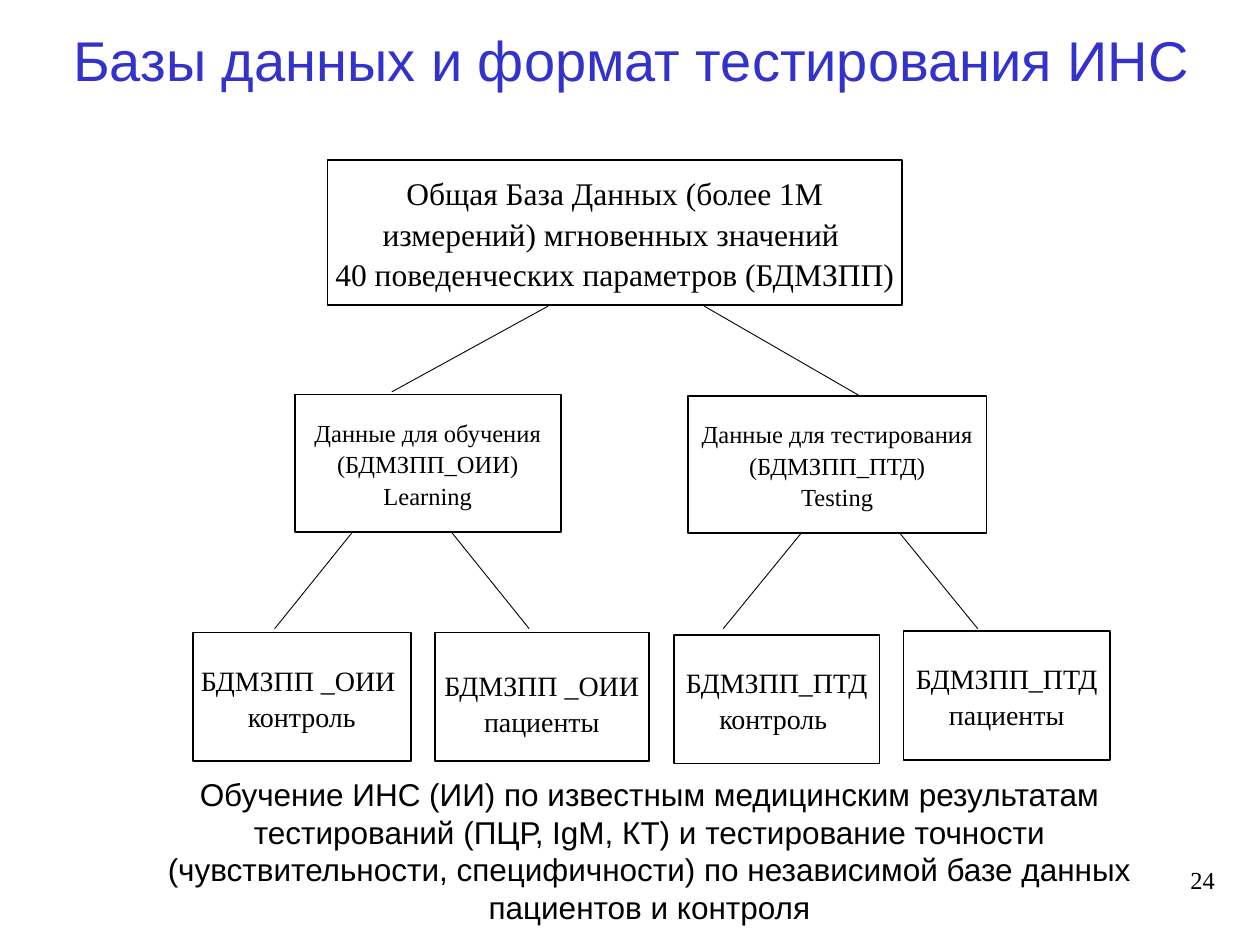
from dataclasses import dataclass

from lxml.etree import SubElement
from pptx import Presentation
from pptx.dml.color import RGBColor
from pptx.enum.shapes import MSO_CONNECTOR, MSO_SHAPE
from pptx.enum.text import MSO_ANCHOR, PP_ALIGN
from pptx.oxml.ns import qn
from pptx.util import Inches, Pt


@dataclass(frozen=True)
class Theme:
    ink: RGBColor = RGBColor(0x00, 0x00, 0x00)
    paper: RGBColor = RGBColor(0xFF, 0xFF, 0xFF)
    accent: RGBColor = RGBColor(0x33, 0x33, 0xCC)
    sans: str = "Arial"
    serif: str = "Times New Roman"
    title: int = 32
    body: int = 18
    leaf: int = 16
    small: int = 14
    border: float = 1
    branch: float = 0.5


def assign(target, values):
    for attribute, value in values.items():
        setattr(target, attribute, value)


class SlideBuilder:
    def __init__(self, slide, theme):
        self.slide = slide
        self.theme = theme

    def fill_text(self, frame, lines, size, face, color, align, spacing=None):
        frame.text = "\n".join(lines)
        for paragraph in frame.paragraphs:
            assign(paragraph, {"alignment": align, "line_spacing": spacing})
            assign(paragraph.font, {"size": Pt(size), "name": face})
            paragraph.font.color.rgb = color

    def title(self, text, bounds):
        heading = self.slide.shapes.title
        places = map(Inches, bounds)
        assign(heading, dict(zip(("left", "top", "width", "height"), places)))
        assign(heading.text_frame, {
            "word_wrap": False, "vertical_anchor": MSO_ANCHOR.TOP})
        self.fill_text(heading.text_frame, [text], self.theme.title,
                       self.theme.sans, self.theme.accent, PP_ALIGN.LEFT)

    def text(self, text, bounds, size, face, align):
        label = self.slide.shapes.add_textbox(*map(Inches, bounds))
        label.text_frame.word_wrap = True
        self.fill_text(label.text_frame, [text], size, face, self.theme.ink,
                       align)

    def node(self, lines, bounds, size, top_inset=0.04):
        node = self.slide.shapes.add_shape(
            MSO_SHAPE.RECTANGLE, *map(Inches, bounds))
        node.shadow.inherit = False
        node.fill.solid()
        node.fill.fore_color.rgb = self.theme.paper
        node.line.color.rgb = self.theme.ink
        node.line.width = Pt(self.theme.border)
        inset = Inches(0.04)
        assign(node.text_frame, {
            "word_wrap": True, "vertical_anchor": MSO_ANCHOR.MIDDLE,
            "margin_left": inset, "margin_right": inset,
            "margin_top": Inches(top_inset), "margin_bottom": inset})
        self.fill_text(node.text_frame, lines, size, self.theme.serif,
                       self.theme.ink, PP_ALIGN.CENTER, 1.07)

    def branch(self, start, end):
        branch = self.slide.shapes.add_connector(
            MSO_CONNECTOR.STRAIGHT, *map(Inches, start + end))
        branch.line.color.rgb = self.theme.ink
        branch.line.width = Pt(self.theme.branch)
        SubElement(branch._element.spPr, qn("a:effectLst"))


def main():
    deck = Presentation()
    assign(deck, {"slide_width": Inches(10), "slide_height": Inches(7.5)})
    theme = Theme()
    builder = SlideBuilder(deck.slides.add_slide(deck.slide_layouts[5]), theme)

    builder.title("Базы данных и формат тестирования ИНС",
                  (0.48, 0.15, 9.14, 0.64))
    builder.text("24", (9.01, 6.82, 0.73, 0.5), theme.small, theme.serif,
                 PP_ALIGN.RIGHT)

    builder.node(["Общая База Данных (более 1М измерений) мгновенных значений ",
                  "40 поведенческих параметров (БДМЗПП)"],
                 (2.6, 1.27, 4.56, 1.15), theme.body)
    builder.node(["Данные для обучения (БДМЗПП_ОИИ)", "Learning"],
                 (2.34, 3.13, 2.11, 1.09), theme.small)
    builder.node(["Данные для тестирования (БДМЗПП_ПТД)", "Testing"],
                 (5.46, 3.14, 2.37, 1.09), theme.small)

    leaves = (
        (["БДМЗПП _ОИИ ", "контроль"], 1.53, 5.02, 1.73, 0.04),
        (["БДМЗПП _ОИИ пациенты"], 3.45, 5.02, 1.7, 0.12),
        (["БДМЗПП_ПТД контроль "], 5.35, 5.04, 1.63, 0.04),
        (["БДМЗПП_ПТД", "пациенты"], 7.17, 5.01, 1.64, 0.04),
    )
    for lines, left, top, width, top_inset in leaves:
        builder.node(lines, (left, top, width, 1.02), theme.leaf, top_inset)

    builder.branch((4.35, 2.43), (3.11, 3.11))
    builder.branch((5.59, 2.43), (6.82, 3.14))
    for center, bottom in ((3.19, 4.22), (6.75, 4.23)):
        for side in (-1, 1):
            builder.branch((center + side * 0.39, bottom),
                           (center + side * 1.01, 4.99))

    builder.text("Обучение ИНС (ИИ) по известным медицинским результатам "
                 "тестирований (ПЦР, IgM, КТ) и тестирование точности "
                 "(чувствительности, специфичности) по независимой базе данных "
                 "пациентов и контроля",
                 (1.05, 6.1, 8.21, 1.31), theme.body, theme.sans,
                 PP_ALIGN.CENTER)
    deck.save("out.pptx")


if __name__ == "__main__":
    main()
